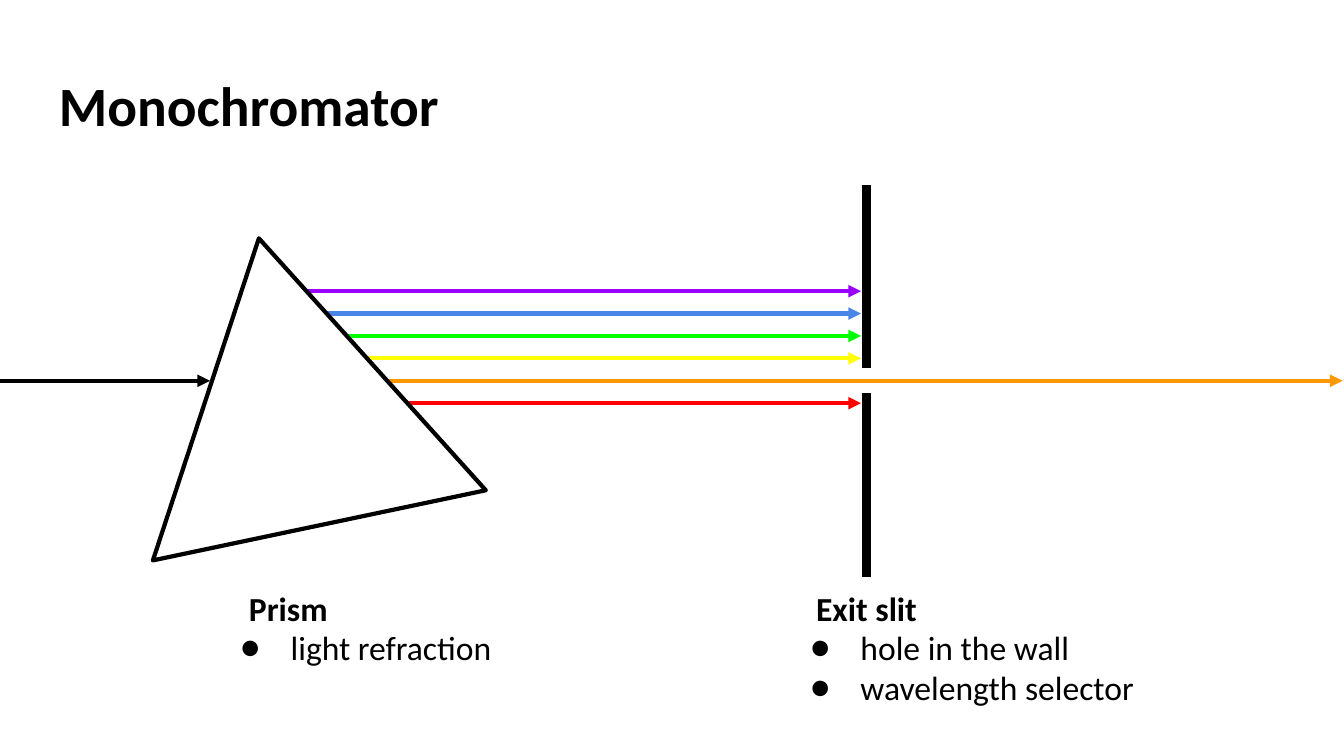
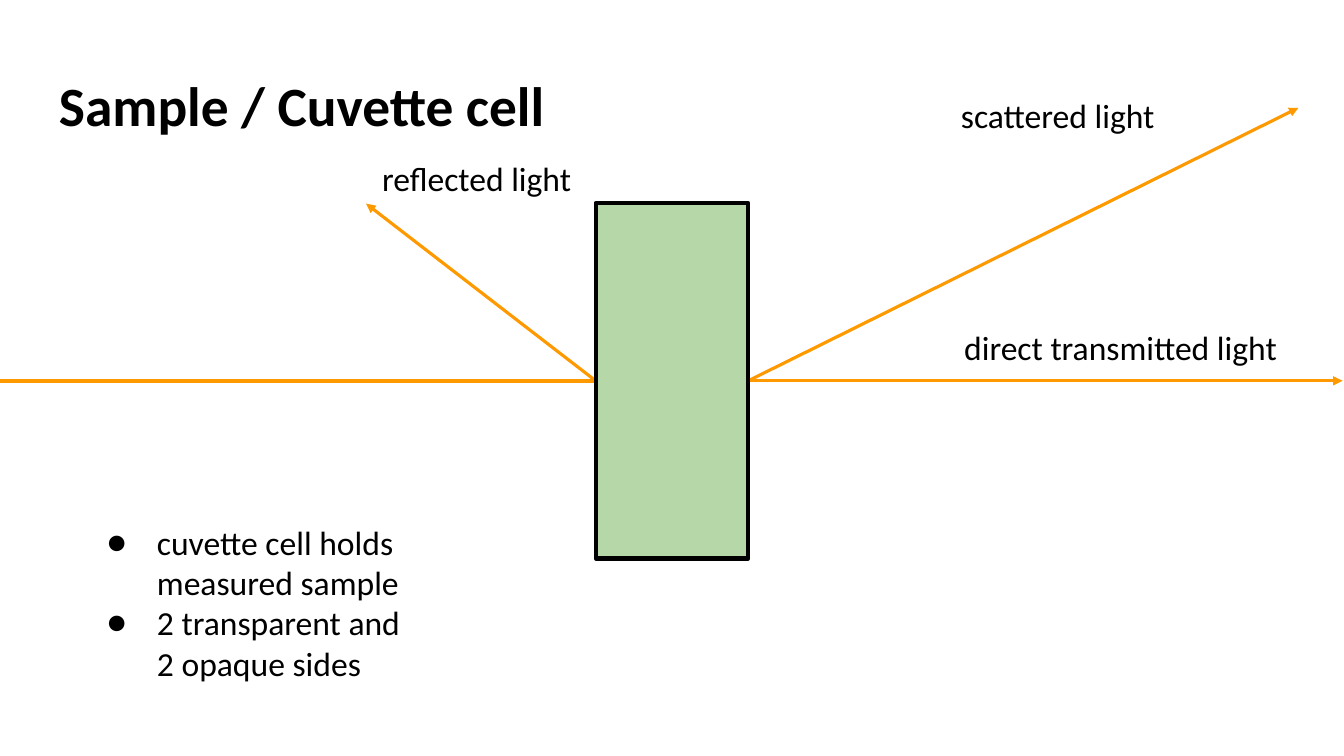
from dataclasses import dataclass

from lxml.etree import SubElement
from pptx import Presentation
from pptx.dml.color import RGBColor
from pptx.enum.shapes import MSO_CONNECTOR as Connectors
from pptx.enum.shapes import MSO_SHAPE as Shapes
from pptx.enum.text import MSO_AUTO_SIZE as AutoSize
from pptx.enum.text import PP_ALIGN as Align
from pptx.oxml.ns import qn
from pptx.shapes.autoshape import Shape
from pptx.shapes.connector import Connector
from pptx.slide import Slide
from pptx.util import Pt

FONT = "Calibri"
BLACK = "000000"
WHITE = "FFFFFF"
ORANGE = "FF9900"
CUVETTE_GREEN = "B6D7A8"
SLIDE_WIDTH, SLIDE_HEIGHT = 960, 540
TITLE_SIZE, BODY_SIZE = 39.6, 24
INSET = 9.6
BULLET_MARGIN, BULLET_HANG = 48, 36
BEAM_Y = 272
BEAM_END = 959
LABEL_WIDTH, LABEL_HEIGHT = 236, 48


@dataclass(frozen=True)
class Box:
    left: float
    top: float
    width: float
    height: float


@dataclass(frozen=True)
class Ray:
    x1: float
    y1: float
    x2: float
    y2: float
    color: str = BLACK
    weight: float = 3
    arrow: bool = True


@dataclass(frozen=True)
class Line:
    text: str
    size: float = BODY_SIZE
    bold: bool = False
    align: Align = Align.LEFT
    spacing: float = 1.0
    indented: bool = False
    bullet: bool = False


def rgb(color: str) -> RGBColor:
    return RGBColor.from_string(color)


def add_text(slide: Slide, box: Box, *lines: Line) -> None:
    shape = slide.shapes.add_textbox(
        Pt(box.left), Pt(box.top), Pt(box.width), Pt(box.height)
    )
    frame = shape.text_frame
    frame.word_wrap = True
    frame.auto_size = AutoSize.NONE
    frame.margin_left = frame.margin_right = Pt(INSET)
    frame.margin_top = frame.margin_bottom = Pt(INSET)
    for index, line in enumerate(lines):
        paragraph = frame.add_paragraph() if index else frame.paragraphs[0]
        paragraph.alignment = line.align
        paragraph.line_spacing = line.spacing
        properties = paragraph._p.get_or_add_pPr()
        if line.indented:
            properties.set("marL", str(Pt(BULLET_MARGIN)))
        if line.bullet:
            properties.set("indent", str(Pt(-BULLET_HANG)))
            bullet_color = SubElement(properties, qn("a:buClr"))
            SubElement(bullet_color, qn("a:srgbClr"), val=BLACK)
            SubElement(properties, qn("a:buFont"), typeface=FONT)
            SubElement(properties, qn("a:buChar"), char="●")
        run = paragraph.add_run()
        run.text = line.text
        run.font.name = FONT
        run.font.size = Pt(line.size)
        run.font.bold = line.bold
        run.font.color.rgb = rgb(BLACK)


def add_title(slide: Slide, text: str) -> None:
    line = Line(text, size=TITLE_SIZE, bold=True, spacing=0.9)
    add_text(slide, Box(32.5, 46.5, 894, 60.5), line)


def add_label(
    slide: Slide,
    text: str,
    left: float,
    top: float,
    width: float = LABEL_WIDTH,
    bold: bool = False,
) -> None:
    line = Line(text, bold=bold, align=Align.CENTER)
    add_text(slide, Box(left, top, width, LABEL_HEIGHT), line)


def bullet(text: str) -> Line:
    return Line(text, indented=True, bullet=True)


def add_ray(slide: Slide, ray: Ray) -> Connector:
    connector = slide.shapes.add_connector(
        Connectors.STRAIGHT, Pt(ray.x1), Pt(ray.y1), Pt(ray.x2), Pt(ray.y2)
    )
    connector.line.width = Pt(ray.weight)
    connector.line.color.rgb = rgb(ray.color)
    properties = connector.element.spPr
    if ray.arrow:
        SubElement(properties.get_or_add_ln(), qn("a:tailEnd"), type="triangle")
    SubElement(properties, qn("a:effectLst"))
    return connector


def add_solid(slide: Slide, kind: Shapes, box: Box, fill: str) -> Shape:
    shape = slide.shapes.add_shape(
        kind, Pt(box.left), Pt(box.top), Pt(box.width), Pt(box.height)
    )
    shape.shadow.inherit = False
    shape.fill.solid()
    shape.fill.fore_color.rgb = rgb(fill)
    shape.line.color.rgb = rgb(BLACK)
    shape.line.width = Pt(3)
    return shape


def build_monochromator(slide: Slide) -> None:
    add_title(slide, "Monochromator")

    wall_x, wall_length, half_slit = 619, 131, 9
    add_ray(slide, Ray(0, BEAM_Y, 150, BEAM_Y))
    for edge, direction in ((BEAM_Y - half_slit, -1), (BEAM_Y + half_slit, 1)):
        far_end = edge + direction * wall_length
        add_ray(slide, Ray(wall_x, edge, wall_x, far_end, weight=6, arrow=False))

    spectrum = ("9900FF", "4A86E8", "00FF00", "FFFF00", ORANGE, "FF0000")
    step_x, step_y = 15, 16
    for index, color in enumerate(spectrum):
        y = BEAM_Y + (index - spectrum.index(ORANGE)) * step_y
        end = BEAM_END if color == ORANGE else wall_x - 4
        add_ray(slide, Ray(215 + index * step_x, y, end, y, color))

    prism = add_solid(slide, Shapes.ISOSCELES_TRIANGLE, Box(85, 168, 243, 209.5), WHITE)
    prism.rotation = 348.1

    heading_top, list_top = 410, 438
    add_label(slide, "Prism", 88, heading_top, bold=True)
    add_label(slide, "Exit slit", 501, heading_top, bold=True)
    add_text(
        slide,
        Box(557, list_top, 281, 78),
        bullet("hole in the wall"),
        bullet("wavelength selector"),
    )
    add_text(
        slide,
        Box(150, list_top, LABEL_WIDTH, LABEL_HEIGHT),
        bullet("light refraction"),
    )


def build_sample(slide: Slide) -> None:
    add_title(slide, "Sample / Cuvette cell")

    box = Box(425.5, BEAM_Y - 127, 109, 254)
    left, right = box.left, box.left + box.width
    cuvette = add_solid(slide, Shapes.RECTANGLE, box, CUVETTE_GREEN)

    incoming = add_ray(slide, Ray(0, BEAM_Y, left, BEAM_Y, ORANGE, arrow=False))
    incoming.end_connect(cuvette, 1)
    outgoing = (
        (Ray(left, BEAM_Y, 261.5, 145.5, ORANGE, 2.25), 1),
        (Ray(right, BEAM_Y, 927.5, 77, ORANGE, 2.25), 3),
        (Ray(right, BEAM_Y, BEAM_END, BEAM_Y, ORANGE, 2.25), 3),
    )
    for ray, side in outgoing:
        add_ray(slide, ray).begin_connect(cuvette, side)
    slide.shapes.element.append(cuvette.element)

    add_label(slide, "scattered light", 637.5, 58.5)
    add_label(slide, "reflected light", 222.5, 103)
    add_label(slide, "direct transmitted light", 663.5, 224, width=274)
    add_text(
        slide,
        Box(54.5, 363, 330.5, 135.5),
        bullet("cuvette cell holds measured sample"),
        bullet("2 transparent and"),
        Line("2 opaque sides", indented=True),
    )


def main() -> None:
    presentation = Presentation()
    presentation.slide_width = Pt(SLIDE_WIDTH)
    presentation.slide_height = Pt(SLIDE_HEIGHT)
    blank = presentation.slide_layouts[6]
    for build in (build_monochromator, build_sample):
        build(presentation.slides.add_slide(blank))
    presentation.save("out.pptx")


if __name__ == "__main__":
    main()
